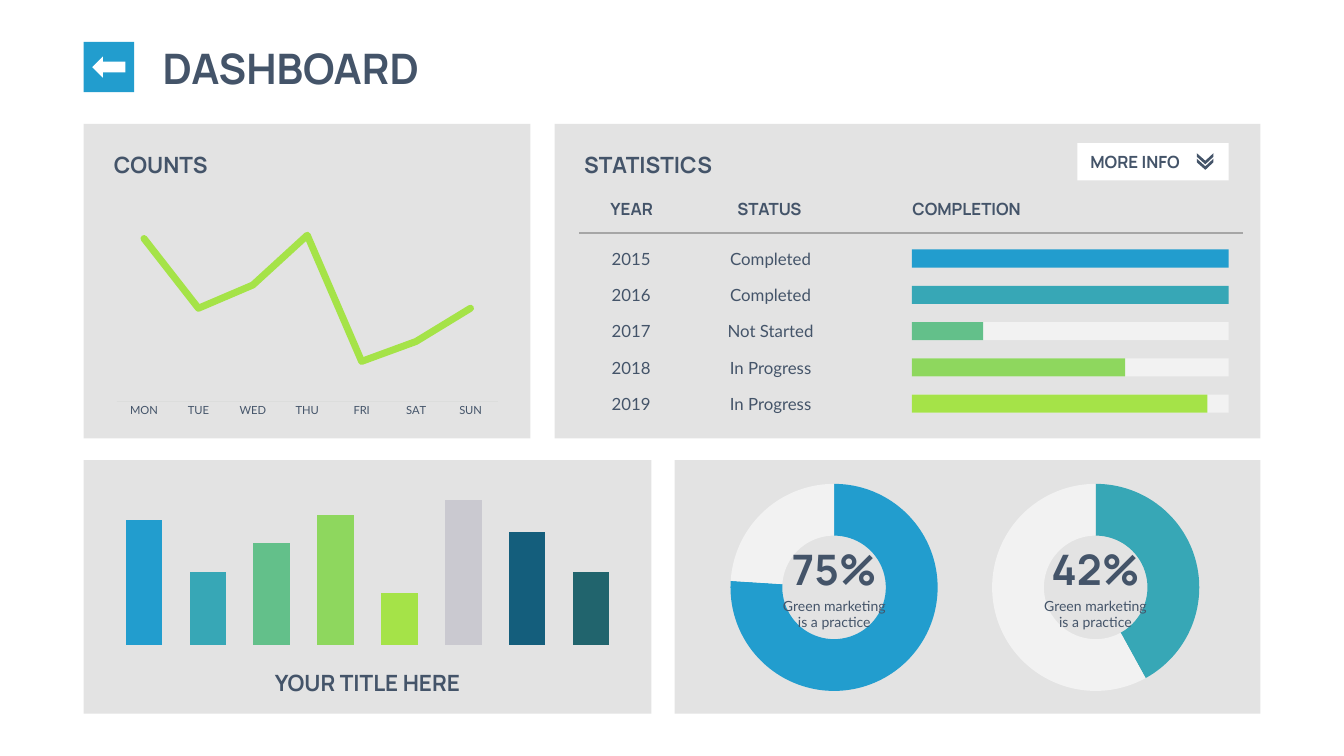
from lxml.etree import SubElement
from pptx import Presentation
from pptx.chart.data import CategoryChartData
from pptx.dml.color import RGBColor
from pptx.enum.chart import XL_CHART_TYPE, XL_MARKER_STYLE, XL_TICK_MARK
from pptx.enum.shapes import MSO_CONNECTOR, MSO_SHAPE
from pptx.enum.text import MSO_ANCHOR, MSO_AUTO_SIZE, PP_ALIGN
from pptx.oxml.ns import qn
from pptx.util import Inches, Pt

INK, PANEL, TRACK, WHITE = "445469", "E3E3E3", "F2F2F2", "FFFFFF"
BLUE, TEAL, GREEN, GRASS, LIME = "229DCE", "37A7B6", "63C08A", "8ED75E", "A5E348"
FULL_BAR = 6.28

deck = Presentation()
deck.slide_width = Inches(26.66)
deck.slide_height = Inches(15)
page = deck.slides.add_slide(deck.slide_layouts[6])


def paint(fill, color):
    fill.solid()
    fill.fore_color.rgb = RGBColor.from_string(color)


def write(text, left, top, width, height, size=24, font="Manrope", bold=True,
          align=PP_ALIGN.LEFT, anchor=MSO_ANCHOR.MIDDLE, wrap=False):
    box = page.shapes.add_textbox(Inches(left), Inches(top), Inches(width), Inches(height))
    frame = box.text_frame
    frame.word_wrap = wrap
    frame.auto_size = MSO_AUTO_SIZE.SHAPE_TO_FIT_TEXT
    frame.vertical_anchor = anchor
    para = frame.paragraphs[0]
    para.alignment = align
    span = para.add_run()
    span.text = text
    span.font.name = font
    span.font.size = Pt(size)
    span.font.bold = bold
    paint(span.font.fill, INK)


statistics = [
    ("2015", "Completed", FULL_BAR, BLUE),
    ("2016", "Completed", FULL_BAR, TEAL),
    ("2017", "Not Started", 1.41, GREEN),
    ("2018", "In Progress", 4.23, GRASS),
    ("2019", "In Progress", 5.86, LIME),
]

blocks = [
    (MSO_SHAPE.RECTANGLE, 1.66, 0.83, 1, 1, BLUE),
    (MSO_SHAPE.LEFT_ARROW, 1.83, 1.12, 0.66, 0.42, WHITE),
    (MSO_SHAPE.RECTANGLE, 1.66, 2.46, 8.86, 6.24, PANEL),
    (MSO_SHAPE.RECTANGLE, 1.66, 9.13, 11.26, 5.03, PANEL),
    (MSO_SHAPE.RECTANGLE, 11, 2.46, 14, 6.24, PANEL),
    (MSO_SHAPE.RECTANGLE, 13.38, 9.13, 11.62, 5.03, PANEL),
    (MSO_SHAPE.RECTANGLE, 21.37, 2.84, 3, 0.74, WHITE),
]
for row, (year, status, done, color) in enumerate(statistics):
    bar_top = 4.95 + 0.72 * row
    if done < FULL_BAR:
        blocks.append((MSO_SHAPE.RECTANGLE, 18.09, bar_top, FULL_BAR, 0.36, TRACK))
    blocks.append((MSO_SHAPE.RECTANGLE, 18.09, bar_top, done, 0.36, color))

for kind, left, top, width, height, color in blocks:
    block = page.shapes.add_shape(kind, Inches(left), Inches(top), Inches(width), Inches(height))
    block.shadow.inherit = False
    block.line.fill.background()
    paint(block.fill, color)

write("DASHBOARD", 3.13, 0.78, 5.56, 1.11, size=60)
write("COUNTS", 2.16, 2.94, 2.09, 0.64, size=32)
write("STATISTICS", 11.49, 2.94, 2.76, 0.64, size=32)
write("MORE INFO", 21.53, 2.96, 2.12, 0.5)
for heading, left, width in [("YEAR", 12.01, 1.08), ("STATUS", 14.53, 1.5), ("COMPLETION", 18, 2.4)]:
    write(heading, left, 3.89, width, 0.5)
for row, (year, status, done, color) in enumerate(statistics):
    for text, left, width in [(year, 12.03, 0.98), (status, 14.33, 1.91)]:
        write(text, left, 4.88 + 0.72 * row, width, 0.5,
              font="Lato", bold=False, align=PP_ALIGN.CENTER)

chevron_tops = (3.04, 3.15)
builder = page.shapes.build_freeform(Inches(24.07), Inches(chevron_tops[0]))
for top in chevron_tops:
    builder.move_to(Inches(24.07), Inches(top))
    corners = [(24.07, top + 0.07), (23.91, top + 0.22), (23.74, top + 0.07),
               (23.74, top), (23.91, top + 0.15)]
    builder.add_line_segments([(Inches(x), Inches(y)) for x, y in corners], close=True)
chevrons = builder.convert_to_shape()
chevrons.shadow.inherit = False
chevrons.line.fill.background()
paint(chevrons.fill, INK)

rule = page.shapes.add_connector(MSO_CONNECTOR.STRAIGHT, Inches(11.49), Inches(4.62),
                                 Inches(24.66), Inches(4.62))
rule.line.width = Pt(3)
paint(rule.line.fill, "A6A6A6")
SubElement(rule.element.spPr, qn("a:effectLst"))

days = ["MON", "TUE", "WED", "THU", "FRI", "SAT", "SUN"]
bar_colors = [BLUE, TEAL, GREEN, GRASS, LIME, "CAC9D0", "145E7C", "21646D"]
charts = [
    (XL_CHART_TYPE.LINE_MARKERS, 2.16, 3.92, 7.87, 4.43, days, [98, 56, 70, 100, 24, 36, 56], []),
    (XL_CHART_TYPE.COLUMN_CLUSTERED, 2.01, 9.28, 10.56, 3.58, list("12345678"),
     [86, 50, 70, 90, 36, 100, 78, 50], bar_colors),
    (XL_CHART_TYPE.DOUGHNUT, 14.49, 9.6, 4.11, 4.11, list("12"), [76, 24], [BLUE, TRACK]),
    (XL_CHART_TYPE.DOUGHNUT, 19.68, 9.6, 4.11, 4.11, list("12"), [42, 58], [TEAL, TRACK]),
]
for kind, left, top, width, height, categories, values, colors in charts:
    data = CategoryChartData()
    data.categories = categories
    data.add_series("Series 1", values)
    chart = page.shapes.add_chart(kind, Inches(left), Inches(top), Inches(width),
                                  Inches(height), data).chart
    chart.has_legend = False
    chart.has_title = False
    is_line = kind == XL_CHART_TYPE.LINE_MARKERS
    chart.font.name = "Lato" if is_line else "Calibri"
    chart.font.size = Pt(16 if is_line else 10)
    paint(chart.font.fill, INK if is_line else "737572")
    plot = chart.plots[0]
    series = plot.series[0]
    for index, color in enumerate(colors):
        paint(series.points[index].format.fill, color)

    if kind == XL_CHART_TYPE.DOUGHNUT:
        plot.vary_by_categories = True
        next(chart.element.iter(qn("c:holeSize"))).set("val", "75")
        area = next(chart.element.iter(qn("c:plotArea")))
        for old_layout in area.findall(qn("c:layout")):
            area.remove(old_layout)
        layout = SubElement(area, qn("c:layout"))
        area.insert(0, layout)
        manual = SubElement(layout, qn("c:manualLayout"))
        for tag, value in [("layoutTarget", "inner"), ("xMode", "edge"), ("yMode", "edge"),
                           ("x", "0"), ("y", "0"), ("w", "1"), ("h", "1")]:
            SubElement(manual, qn("c:" + tag)).set("val", value)
        continue

    plot.vary_by_categories = False
    chart.value_axis.has_major_gridlines = False
    chart.value_axis.minimum_scale = 0
    chart.value_axis.maximum_scale = 120
    chart.value_axis.visible = False
    if is_line:
        series.smooth = False
        series.format.line.width = Pt(10)
        paint(series.format.line.fill, LIME)
        next(chart.element.iter(qn("a:ln"))).set("cap", "rnd")
        series.marker.style = XL_MARKER_STYLE.CIRCLE
        series.marker.size = 5
        paint(series.marker.format.fill, LIME)
        paint(series.marker.format.line.fill, LIME)
        axis = chart.category_axis
        axis.major_tick_mark = XL_TICK_MARK.NONE
        axis.format.line.width = Pt(0.75)
        paint(axis.format.line.fill, "DCDDDC")
    else:
        plot.gap_width = 75
        plot.overlap = 28
        chart.category_axis.visible = False

write("YOUR TITLE HERE", 5.35, 13.22, 3.88, 0.64, size=32, align=PP_ALIGN.CENTER)
for percent, center, width in [("75%", 16.55, 1.93), ("42%", 21.73, 1.98)]:
    write(percent, center - width / 2, 10.72, width, 1.11, size=60,
          align=PP_ALIGN.CENTER, anchor=MSO_ANCHOR.BOTTOM)
    write("Green marketing is a practice", center - 2.43 / 2, 11.8, 2.43, 0.77, size=20, font="Lato",
          bold=False, align=PP_ALIGN.CENTER, anchor=MSO_ANCHOR.TOP, wrap=True)

deck.save("out.pptx")
